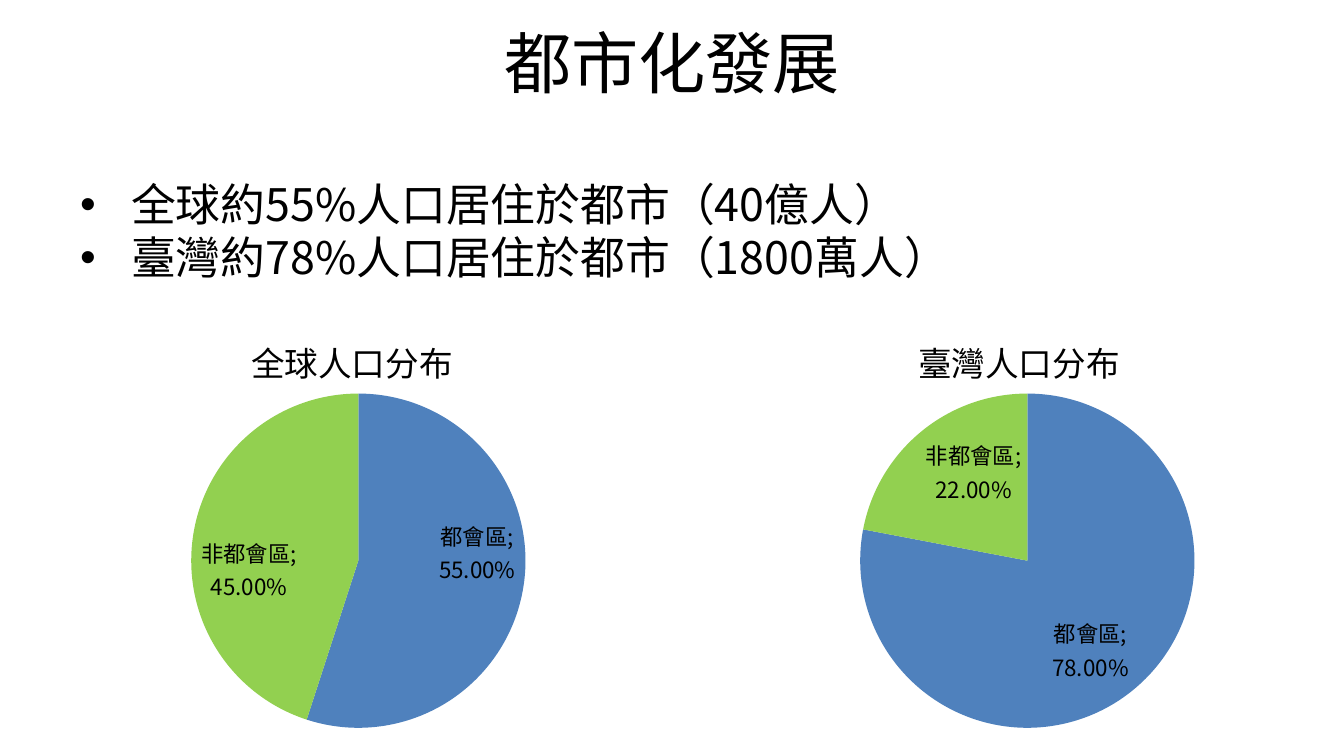
import pptx
import pptx.chart.data
import pptx.dml.color
import pptx.enum.chart
import pptx.enum.text
import pptx.oxml
import pptx.oxml.ns
import pptx.util

EMU_PER_PX = 914400 / 134.4
COLORS = {"text": "000000", "urban": "4F81BD", "rural": "92D050"}
FONT = "Noto Sans CJK SC"
PLOT_AREA = {"x": 0.079, "y": 0.147, "w": 0.904, "h": 0.853}


def px(length):
    return pptx.util.Emu(round(length * EMU_PER_PX))


def color(name):
    return pptx.dml.color.RGBColor.from_string(COLORS[name])


def format_font(font, size, fill="text", face=FONT):
    font.size = pptx.util.Pt(size)
    font.name = face
    font.color.rgb = color(fill)
    east_asian = pptx.oxml.parse_xml(
        f'<a:ea {pptx.oxml.ns.nsdecls("a")} typeface="{face}"/>')
    font._element.find(pptx.oxml.ns.qn("a:latin")).addnext(east_asian)


def write(para, text, size, align=None):
    para.alignment = align
    span = para.add_run()
    span.text = text
    format_font(span.font, size)


class Slide:
    def __init__(self, deck):
        self.page = deck.slides.add_slide(deck.slide_layouts[5])

    def title(self, text, left, top, width, height):
        box = self.page.shapes.title
        box.left, box.top, box.width, box.height = map(px, (left, top, width, height))
        box.text_frame.vertical_anchor = pptx.enum.text.MSO_ANCHOR.MIDDLE
        write(box.text_frame.paragraphs[0], text, 36, align=pptx.enum.text.PP_ALIGN.CENTER)

    def bullets(self, lines, left, top, width, height):
        box = self.page.shapes.add_textbox(*map(px, (left, top, width, height)))
        frame = box.text_frame
        frame.word_wrap = True
        for index, line in enumerate(lines):
            para = frame.add_paragraph() if index else frame.paragraphs[0]
            properties = para._p.get_or_add_pPr()
            properties.set("marL", str(px(51)))
            properties.set("indent", str(px(-51)))
            for xml in ('<a:buFont {} typeface="Arial"/>', '<a:buChar {} char="•"/>'):
                properties.append(pptx.oxml.parse_xml(xml.format(pptx.oxml.ns.nsdecls("a"))))
            para.line_spacing = 0.9
            if index:
                para.space_before = pptx.util.Pt(2.5)
            write(para, line, 24)

    def caption(self, text, left, top, width, height):
        box = self.page.shapes.add_textbox(*map(px, (left, top, width, height)))
        box.text_frame.word_wrap = False
        box.text_frame.auto_size = pptx.enum.text.MSO_AUTO_SIZE.SHAPE_TO_FIT_TEXT
        write(box.text_frame.paragraphs[0], text, 18)

    def pie(self, values, left, top, width, height):
        data = pptx.chart.data.CategoryChartData(number_format="0.00%")
        data.categories = ["都會區", "非都會區"]
        data.add_series("Series 1", values)
        chart = self.page.shapes.add_chart(
            pptx.enum.chart.XL_CHART_TYPE.PIE, *map(px, (left, top, width, height)), data).chart
        chart.has_title = False
        chart.has_legend = False
        format_font(chart.font, 18, face="Calibri")
        chart.plots[0].vary_by_categories = True
        series = chart.plots[0].series[0]
        for index, name in enumerate(("urban", "rural")):
            point = series.points[index]
            point.format.fill.solid()
            point.format.fill.fore_color.rgb = color(name)
            point.format.line.fill.background()
        self.label_pie(series.data_labels)
        self.place_plot(chart)

    def label_pie(self, labels):
        labels.show_value = True
        labels.show_category_name = True
        labels.show_percentage = False
        labels.number_format = "0.00%"
        labels.number_format_is_linked = False
        labels.position = pptx.enum.chart.XL_LABEL_POSITION.INSIDE_END
        format_font(labels.font, 12)
        separator = pptx.oxml.parse_xml(
            f'<c:separator {pptx.oxml.ns.nsdecls("c")}>; </c:separator>')
        labels._element.find(pptx.oxml.ns.qn("c:showBubbleSize")).addnext(separator)

    def place_plot(self, chart):
        area = chart._chartSpace.find(".//" + pptx.oxml.ns.qn("c:plotArea"))
        for layout in area.findall(pptx.oxml.ns.qn("c:layout")):
            area.remove(layout)
        sizes = "".join(f'<c:{key} val="{value}"/>' for key, value in PLOT_AREA.items())
        area.insert(0, pptx.oxml.parse_xml(
            f'<c:layout {pptx.oxml.ns.nsdecls("c")}><c:manualLayout>'
            '<c:layoutTarget val="inner"/><c:xMode val="edge"/><c:yMode val="edge"/>'
            f'{sizes}</c:manualLayout></c:layout>'))


def main():
    deck = pptx.Presentation()
    deck.slide_width, deck.slide_height = px(1344), px(756)
    slide = Slide(deck)
    slide.bullets(["全球約55%人口居住於都市（40億人）", "臺灣約78%人口居住於都市（1800萬人）"],
                  67, 176, 1210, 499)
    slide.title("都市化發展", 67, 9, 1210, 105)
    regions = [("全球人口分布", (0.55, 0.45), 0, 238), ("臺灣人口分布", (0.78, 0.22), 669, 905)]
    for name, values, chart_left, caption_left in regions:
        slide.pie(values, chart_left, 336, 675, 392)
        slide.caption(name, caption_left, 336, 231, 54)
    deck.save("out.pptx")


if __name__ == "__main__":
    main()
